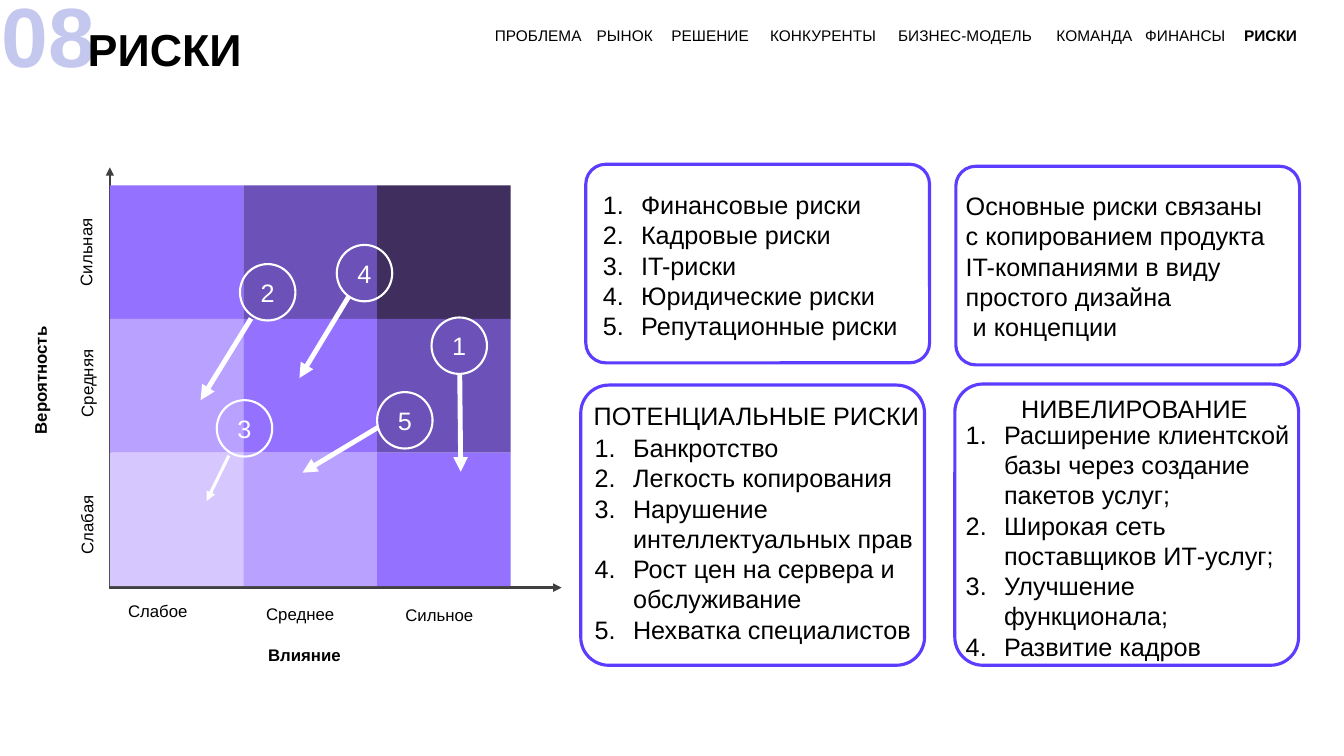
from lxml.etree import SubElement
from pptx import Presentation
from pptx.dml.color import RGBColor
from pptx.enum.shapes import MSO_CONNECTOR, MSO_SHAPE
from pptx.enum.text import MSO_ANCHOR, MSO_AUTO_SIZE, PP_ALIGN
from pptx.oxml.ns import qn
from pptx.util import Inches, Pt

BLACK = RGBColor(0x00, 0x00, 0x00)
WHITE = RGBColor(0xFF, 0xFF, 0xFF)
AXIS_GRAY = RGBColor(0x40, 0x40, 0x40)
NUMBER_LILAC = RGBColor(0xC4, 0xC7, 0xEE)
CARD_VIOLET = RGBColor(0x5D, 0x3B, 0xFF)
PALE = RGBColor(0xD6, 0xC7, 0xFF)
LIGHT = RGBColor(0xB9, 0xA1, 0xFF)
MEDIUM = RGBColor(0x95, 0x71, 0xFF)
STRONG = RGBColor(0x6B, 0x51, 0xB8)
DARK = RGBColor(0x3F, 0x2E, 0x5E)
FONT = "Arial"

SECTION_NUMBER = "08"
TITLE = "РИСКИ"
# Section name, left, width
NAVIGATION = [
    ("ПРОБЛЕМА", 4.81, 1.07), ("РЫНОК", 5.82, 0.76), ("РЕШЕНИЕ", 6.56, 0.98),
    ("КОНКУРЕНТЫ", 7.54, 1.28), ("БИЗНЕС-МОДЕЛЬ", 8.81, 1.54),
    ("КОМАНДА", 10.38, 0.96), ("ФИНАНСЫ", 11.26, 1.04), ("РИСКИ", 12.24, 0.73),
]

# Rows from strong to weak probability, columns from weak to strong impact
MATRIX = [(MEDIUM, STRONG, DARK), (LIGHT, MEDIUM, STRONG), (PALE, LIGHT, MEDIUM)]
MATRIX_LEFT, MATRIX_TOP, CELL = 1.09, 1.84, 1.325
AXIS_Y = 5.83
AXES = [((1.09, AXIS_Y), (1.09, 1.66), 1.5), ((1.08, AXIS_Y), (5.57, AXIS_Y), 1.75)]
# Text, left, top, width, height, vertical, bold
AXIS_LABELS = [
    ("Влияние", 2.66, 6.4, 0.8, 0.2, False, True),
    ("Слабое", 1.27, 5.96, 0.7, 0.2, False, False),
    ("Среднее", 2.64, 5.99, 0.8, 0.2, False, False),
    ("Сильное", 4.02, 6.0, 0.8, 0.2, False, False),
    ("Вероятность", 0.3, 3.21, 0.2, 1.1, True, True),
    ("Сильная", 0.75, 2.14, 0.2, 0.7, True, False),
    ("Средняя", 0.76, 3.44, 0.2, 0.7, True, False),
    ("Слабая", 0.76, 4.89, 0.2, 0.61, True, False),
]
# Risk, circle left and top, arrow start, arrow end, arrow width
RISKS = [
    ("5", (3.74, 3.89), (3.75, 4.24), (3.0, 4.69), 3.5),
    ("1", (4.28, 3.15), (4.56, 3.72), (4.57, 4.68), 3.5),
    ("2", (2.38, 2.62), (2.49, 3.16), (1.99, 3.97), 3.5),
    ("4", (3.34, 2.43), (3.46, 2.94), (2.97, 3.75), 3.5),
    ("3", (2.15, 3.97), (2.27, 4.52), (2.05, 4.97), 2.25),
]
CIRCLE_SIZE = (0.55, 0.56)

# Frame box, heading with its box, text box, numbered, lines
CARDS = [
    ((5.81, 1.63, 3.41, 1.97), None, (5.88, 1.83, 3.15, 1.62), True,
     ["Финансовые риски", "Кадровые риски", "IT-риски", "Юридические риски",
      "Репутационные риски"]),
    ((9.48, 1.65, 3.41, 1.97), None, (9.48, 1.84, 3.41, 1.62), False,
     ["Основные риски связаны",
      "с копированием продукта IT-компаниями в виду простого дизайна",
      " и концепции"]),
    ((5.76, 3.82, 3.41, 2.78), ("ПОТЕНЦИАЛЬНЫЕ РИСКИ", (5.79, 3.92, 3.47, 0.4)),
     (5.8, 4.24, 3.41, 2.22), True,
     ["Банкротство", "Легкость копирования", "Нарушение интеллектуальных прав",
      "Рост цен на сервера и обслуживание", "Нехватка специалистов"]),
    ((9.47, 3.81, 3.41, 2.79), ("НИВЕЛИРОВАНИЕ", (10.03, 3.85, 2.47, 0.4)),
     (9.48, 4.11, 3.49, 2.52), True,
     ["Расширение клиентской базы через создание пакетов услуг;",
      "Широкая сеть поставщиков ИТ-услуг;", "Улучшение функционала;",
      "Развитие кадров"]),
]


def add_run(paragraph, text, size, color=BLACK, bold=False):
    run = paragraph.add_run()
    run.text = text
    run.font.name, run.font.size, run.font.bold = FONT, Pt(size), bold
    run.font.color.rgb = color


def clear_margins(frame):
    frame.margin_left = frame.margin_right = frame.margin_top = frame.margin_bottom = 0


def add_text(slide, box, lines, size, color=BLACK, bold=False, wrap=False):
    text_box = slide.shapes.add_textbox(*map(Inches, box))
    frame = text_box.text_frame
    frame.word_wrap = wrap
    for index, line in enumerate(lines):
        paragraph = frame.add_paragraph() if index else frame.paragraphs[0]
        add_run(paragraph, line, size, color, bold)
    return text_box


def number_paragraphs(frame):
    for paragraph in frame.paragraphs:
        properties = paragraph._p.get_or_add_pPr()
        properties.set("marL", str(Inches(0.38)))
        properties.set("indent", str(-Inches(0.38)))
        SubElement(properties, qn("a:buFont"), typeface=FONT)
        SubElement(properties, qn("a:buAutoNum"), type="arabicPeriod")


def add_shape(slide, kind, box, fill=None, line=None, line_width=1.5):
    shape = slide.shapes.add_shape(kind, *map(Inches, box))
    shape.shadow.inherit = False
    if fill is None:
        shape.fill.background()
    else:
        shape.fill.solid()
        shape.fill.fore_color.rgb = fill
    if line is None:
        shape.line.fill.background()
    else:
        shape.line.color.rgb = line
        shape.line.width = Pt(line_width)
    return shape


def add_arrow(slide, start, end, color, width):
    arrow = slide.shapes.add_connector(MSO_CONNECTOR.STRAIGHT, *map(Inches, start + end))
    arrow.line.color.rgb = color
    arrow.line.width = Pt(width)
    SubElement(arrow.line._get_or_add_ln(), qn("a:tailEnd"), type="triangle")
    SubElement(arrow._element.spPr, qn("a:effectLst"))


def add_header(slide):
    title = slide.shapes.title
    title.left, title.top, title.width, title.height = map(Inches, (0.77, 0.17, 1.74, 0.64))
    frame = title.text_frame
    frame.word_wrap = False
    frame.auto_size = MSO_AUTO_SIZE.NONE
    frame.vertical_anchor = MSO_ANCHOR.TOP
    frame.paragraphs[0].alignment = PP_ALIGN.LEFT
    add_run(frame.paragraphs[0], TITLE, 32, bold=True)
    number = add_text(slide, (-0.08, -0.21, 1.14, 1.11), [SECTION_NUMBER], 60,
                      NUMBER_LILAC, True)
    title._element.addprevious(number._element)  # the title overlaps the number
    for name, left, width in NAVIGATION:
        add_text(slide, (left, 0.21, width, 0.29), [name], 11, bold=name == TITLE)


def add_matrix(slide):
    for start, end, width in AXES:
        add_arrow(slide, start, end, AXIS_GRAY, width)
    for row, colors in enumerate(MATRIX):
        for column, color in enumerate(colors):
            box = (MATRIX_LEFT + column * CELL, MATRIX_TOP + row * CELL, CELL, CELL)
            add_shape(slide, MSO_SHAPE.RECTANGLE, box, fill=color)
    for text, *box, vertical, bold in AXIS_LABELS:
        frame = add_text(slide, box, [text], 12, bold=bold).text_frame
        clear_margins(frame)
        if vertical:
            frame._txBody.bodyPr.set("vert", "vert270")
    for number, corner, start, end, width in RISKS:
        circle = add_shape(slide, MSO_SHAPE.OVAL, corner + CIRCLE_SIZE, line=WHITE)
        frame = circle.text_frame
        clear_margins(frame)
        frame.vertical_anchor = MSO_ANCHOR.MIDDLE
        frame.paragraphs[0].alignment = PP_ALIGN.CENTER
        add_run(frame.paragraphs[0], number, 18, WHITE)
        add_arrow(slide, start, end, WHITE, width)


def add_cards(slide):
    for frame_box, heading, text_box, numbered, lines in CARDS:
        card = add_shape(slide, MSO_SHAPE.ROUNDED_RECTANGLE, frame_box,
                         line=CARD_VIOLET, line_width=2.25)
        card.adjustments[0] = 0.1
        if heading:
            add_text(slide, heading[1], [heading[0]], 18)
        body = add_text(slide, text_box, lines, 18, wrap=True)
        if numbered:
            number_paragraphs(body.text_frame)


def main():
    presentation = Presentation()
    presentation.slide_width, presentation.slide_height = Inches(13.33), Inches(7.5)
    slide = presentation.slides.add_slide(presentation.slide_layouts[5])
    add_header(slide)
    add_matrix(slide)
    add_cards(slide)
    presentation.save("out.pptx")


if __name__ == "__main__":
    main()
